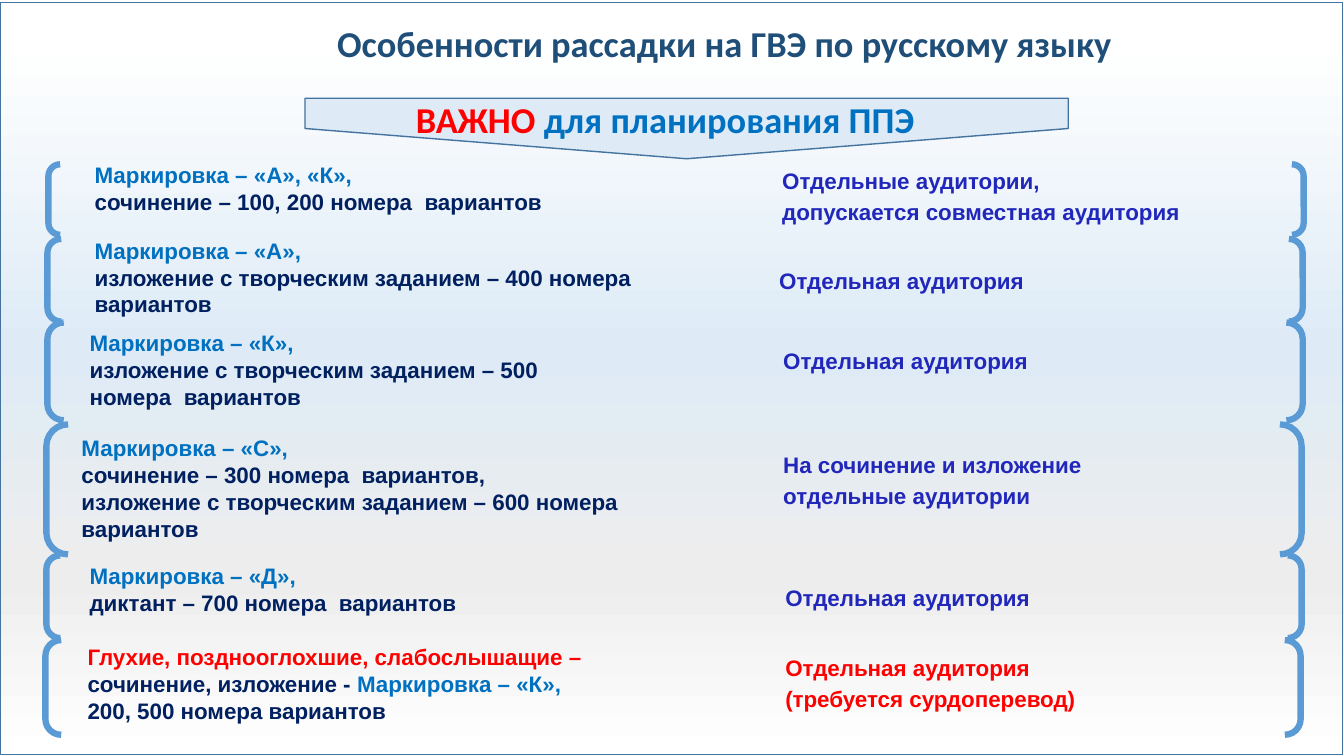
from lxml import etree
from pptx import Presentation
from pptx import util as u
from pptx.dml.color import RGBColor
from pptx.enum import shapes, text
from pptx.oxml.ns import qn

COLORS = {
    "title": "1F4E79", "blue": "0070C0", "navy": "002060", "violet": "2027BA",
    "red": "FF0000", "banner": "DEEBF7", "edge": "43739E", "bracket": "5B9BD5",
}
BACKGROUND = [(5, "FFFFFF"), (46, "DEEBF6"), (76, "EDEDED"), (100, "FFFFFF")]
HEADING = dict(font="Calibri", size=26, spacing=0.9, align=text.PP_ALIGN.CENTER)
BREAK = ("\v", None)


class SlideBuilder:
    def __init__(self, slide):
        self.slide = slide

    def background(self, stops):
        fill = self.slide.background.fill
        fill.gradient()
        grad = self.slide._element.find(".//" + qn("a:gradFill"))
        stop_list = grad.find(qn("a:gsLst"))
        for old in list(stop_list):
            stop_list.remove(old)
        for position, color in stops:
            stop = etree.SubElement(stop_list, qn("a:gs"), pos=str(position * 1000))
            etree.SubElement(stop, qn("a:srgbClr"), val=color)
        grad.find(qn("a:lin")).set("ang", "5400000")

    def shape(self, kind, box, line, width, fill=None, rotation=0):
        sp = self.slide.shapes.add_shape(kind, *map(u.Inches, box))
        sp.shadow.inherit = False
        sp.rotation = rotation
        sp.line.color.rgb = RGBColor.from_string(COLORS[line])
        sp.line.width = u.Pt(width)
        if fill:
            sp.fill.solid()
            sp.fill.fore_color.rgb = RGBColor.from_string(COLORS[fill])
        else:
            sp.fill.background()

    def text(self, box, paragraphs, font="Arial", size=16, spacing=None,
             align=None, indent=0):
        sp = self.slide.shapes.add_textbox(*map(u.Inches, box))
        tf = sp.text_frame
        tf.word_wrap = True
        if align:
            tf.vertical_anchor = text.MSO_ANCHOR.MIDDLE
            tf.margin_left = tf.margin_right = u.Inches(0.04)
            tf.margin_top = tf.margin_bottom = u.Inches(0.04)
        else:
            tf.auto_size = text.MSO_AUTO_SIZE.SHAPE_TO_FIT_TEXT
        for i, runs in enumerate(paragraphs):
            p = tf.add_paragraph() if i else tf.paragraphs[0]
            p.line_spacing = spacing
            p.alignment = align
            if indent:
                p._p.get_or_add_pPr().set("marL", str(u.Inches(indent)))
            for wording, color in runs:
                if wording == "\v":
                    p.add_line_break()
                    continue
                r = p.add_run()
                r.text = wording
                r.font.name, r.font.size, r.font.bold = font, u.Pt(size), True
                r.font.color.rgb = RGBColor.from_string(COLORS[color])

    def marking(self, left, top, width, lines, paragraphs):
        self.text((left, top, width, 0.1 + 0.27 * lines), paragraphs, indent=0.39)

    def room(self, left, top, width, lines, color):
        self.text((left, top, width, 0.04 + 0.34 * len(lines)),
                  [[(line, color)] for line in lines], spacing=1.15)

    def brackets(self, left, top, height):
        self.shape(shapes.MSO_SHAPE.DOUBLE_BRACKET, (left, top, 12.45, height),
                   "bracket", 4.5)


def marked(letters, *details):
    return [[(f"Маркировка – {letters},", "blue")]] + [[(d, "navy")] for d in details]


# Each row: marking (left, top, width, lines, text), room, bracket (left, top, height)
RETELLING = "изложение с творческим заданием – {} номера  вариантов"
SEPARATE = ["Отдельная аудитория"]
ROWS = [
    ((0.45, 1.55, 6.15, 2, marked("«А», «К»", "сочинение – 100, 200 номера  вариантов")),
     (7.66, 1.57, 5.17, ["Отдельные аудитории,", "допускается совместная аудитория"], "violet"),
     (0.48, 1.63, 0.7)),
    ((0.45, 2.3, 6.07, 3, marked("«А»", RETELLING.format(400))),
     (7.63, 2.56, 5.3, SEPARATE, "violet"),
     (0.47, 2.37, 0.82)),
    ((0.4, 3.22, 5.68, 3, marked("«К»", RETELLING.format(500))),
     (7.67, 3.35, 5.26, SEPARATE, "violet"),
     (0.47, 3.2, 0.97)),
    ((0.32, 4.26, 6.07, 4, marked("«С»", "сочинение – 300 номера  вариантов,",
                                  RETELLING.format(600))),
     (7.67, 4.39, 5.04, ["На сочинение и изложение", "отдельные аудитории"], "violet"),
     (0.46, 4.21, 1.29)),
    ((0.4, 5.53, 5.98, 2, marked("«Д»", "диктант – 700 номера  вариантов")),
     (7.69, 5.71, 5.27, SEPARATE, "violet"),
     (0.46, 5.51, 0.82)),
    ((0.38, 6.33, 6.67, 3, [
        [("Глухие, позднооглохшие, слабослышащие –", "red"), BREAK,
         ("сочинение, изложение - ", "navy"), ("Маркировка – «К»,", "blue")],
        [("200, 500 номера вариантов", "navy")]]),
     (7.69, 6.4, 5.6, SEPARATE + ["(требуется сурдоперевод)"], "red"),
     (0.45, 6.35, 0.94)),
]


def main():
    prs = Presentation()
    prs.slide_width, prs.slide_height = u.Inches(13.33), u.Inches(7.5)
    s = SlideBuilder(prs.slides.add_slide(prs.slide_layouts[6]))

    # Background and frame
    s.background(BACKGROUND)
    s.shape(shapes.MSO_SHAPE.RECTANGLE, (0, 0.02, 13.31, 7.46), "edge", 0.25)

    # Title and banner
    s.shape(shapes.MSO_SHAPE.PENTAGON, (6.51, -2.51, 0.6, 7.57), "edge", 1,
            fill="banner", rotation=90)
    s.text((1.31, 0, 11.76, 0.91),
           [[("Особенности рассадки на ГВЭ по русскому языку", "title")]], **HEADING)
    s.text((0.72, 0.75, 11.76, 0.91),
           [[("ВАЖНО", "red"), (" для планирования ППЭ", "blue")]], **HEADING)

    # Rows of markings and rooms
    for marking, room, bracket in ROWS:
        s.marking(*marking)
        s.room(*room)
        s.brackets(*bracket)

    prs.save("out.pptx")


if __name__ == "__main__":
    main()
